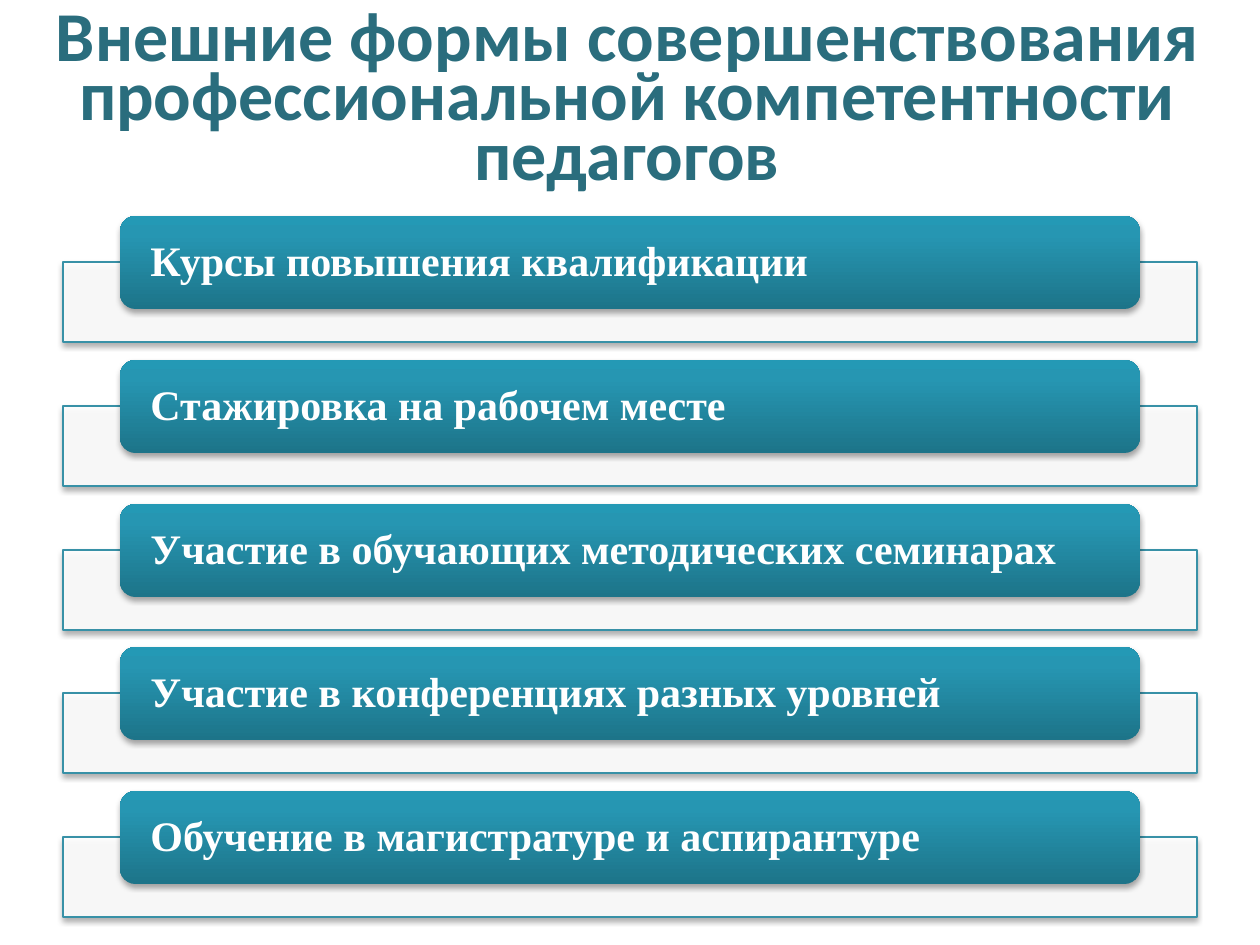
from lxml import etree
from pptx import Presentation
from pptx.dml.color import RGBColor
from pptx.enum.shapes import MSO_SHAPE
from pptx.enum.text import MSO_ANCHOR, PP_ALIGN
from pptx.oxml import parse_xml
from pptx.oxml.ns import nsdecls, qn
from pptx.util import Emu, Pt

RECT = MSO_SHAPE.RECTANGLE
ROUND_RECT = MSO_SHAPE.ROUNDED_RECTANGLE
MIDDLE = MSO_ANCHOR.MIDDLE
LEFT, CENTER = PP_ALIGN.LEFT, PP_ALIGN.CENTER

WHITE = RGBColor(0xFF, 0xFF, 0xFF)
BLACK = RGBColor(0x00, 0x00, 0x00)
TITLE = RGBColor(0x2A, 0x6D, 0x7D)
BORDER = RGBColor(0x38, 0x91, 0xA7)
TEAL_STOPS = (
    (0, RGBColor(0x1D, 0x74, 0x89)),
    (80, RGBColor(0x26, 0x96, 0xB2)),
    (100, RGBColor(0x24, 0x99, 0xB5)),
)

EMU_PER_PX = 914400 / 126
WIDTH, HEIGHT = 1260, 945
FIRST_TOP, PITCH = 216, 143.75
FORMS = (
    "Курсы повышения квалификации",
    "Стажировка на рабочем месте",
    "Участие в обучающих методических семинарах",
    "Участие в конференциях разных уровней",
    "Обучение в магистратуре и аспирантуре",
)


def px(value):
    return Emu(round(value * EMU_PER_PX))


def write(tf, text, *, font, size, color, align=LEFT, spacing=None, inset=None):
    tf.word_wrap = True
    tf.vertical_anchor = MIDDLE
    if inset is not None:
        tf.margin_left = tf.margin_right = px(inset)
        tf.margin_top = tf.margin_bottom = 0
    p = tf.paragraphs[0]
    p.alignment = align
    p.line_spacing = spacing
    r = p.add_run()
    r.text = text
    r.font.name = font
    r.font.size = Pt(size)
    r.font.bold = True
    r.font.color.rgb = color


class Deck:
    def __init__(self, prs):
        self.s = prs.slides.add_slide(prs.slide_layouts[6])

    def shape(self, kind, *box):
        return self.s.shapes.add_shape(kind, *map(px, box))

    def shadow(self, sp):
        sp.shadow.inherit = False
        effects = sp._element.spPr.find(qn("a:effectLst"))
        effects.append(parse_xml(
            f'<a:outerShdw {nsdecls("a")} blurRad="{Pt(3.1)}" dist="{Pt(1.8)}" '
            f'dir="5400000" rotWithShape="0"><a:srgbClr val="{BLACK}">'
            '<a:alpha val="35000"/></a:srgbClr></a:outerShdw>'))

    def title(self, text, *box):
        sp = self.s.shapes.add_textbox(*map(px, box))
        write(sp.text_frame, text, font="Calibri", size=40, color=TITLE,
              align=CENTER, spacing=Pt(34))

    def panel(self, *box):
        sp = self.shape(RECT, *box)
        sp.fill.solid()
        sp.fill.fore_color.rgb = WHITE
        color = sp._element.spPr.find(qn("a:solidFill"))[0]
        etree.SubElement(color, qn("a:alpha"), val="90000")
        sp.line.color.rgb = BORDER
        sp.line.width = Pt(0.75)
        self.shadow(sp)

    def bar(self, text, *box):
        sp = self.shape(ROUND_RECT, *box)
        stops = "".join(
            f'<a:gs pos="{pos * 1000}"><a:srgbClr val="{color}"/></a:gs>'
            for pos, color in TEAL_STOPS)
        sp._element.spPr.find(qn("a:prstGeom")).addnext(parse_xml(
            f'<a:gradFill {nsdecls("a")} rotWithShape="1"><a:gsLst>{stops}</a:gsLst>'
            '<a:lin ang="16200000" scaled="0"/></a:gradFill>'))
        sp.line.fill.background()
        self.shadow(sp)
        write(sp.text_frame, text, font="Times New Roman", size=24, color=WHITE,
              spacing=0.9, inset=26)


def main():
    prs = Presentation()
    prs.slide_width, prs.slide_height = px(WIDTH), px(HEIGHT)
    deck = Deck(prs)
    deck.title("Внешние формы совершенствования профессиональной "
               "компетентности педагогов", -3, 26, 1260, 158)
    for i, text in enumerate(FORMS):
        top = round(FIRST_TOP + i * PITCH)
        deck.panel(63, top + 46, 1134, 80)
        deck.bar(text, 120, top, 1020, 93)
    prs.save("out.pptx")


if __name__ == "__main__":
    main()
